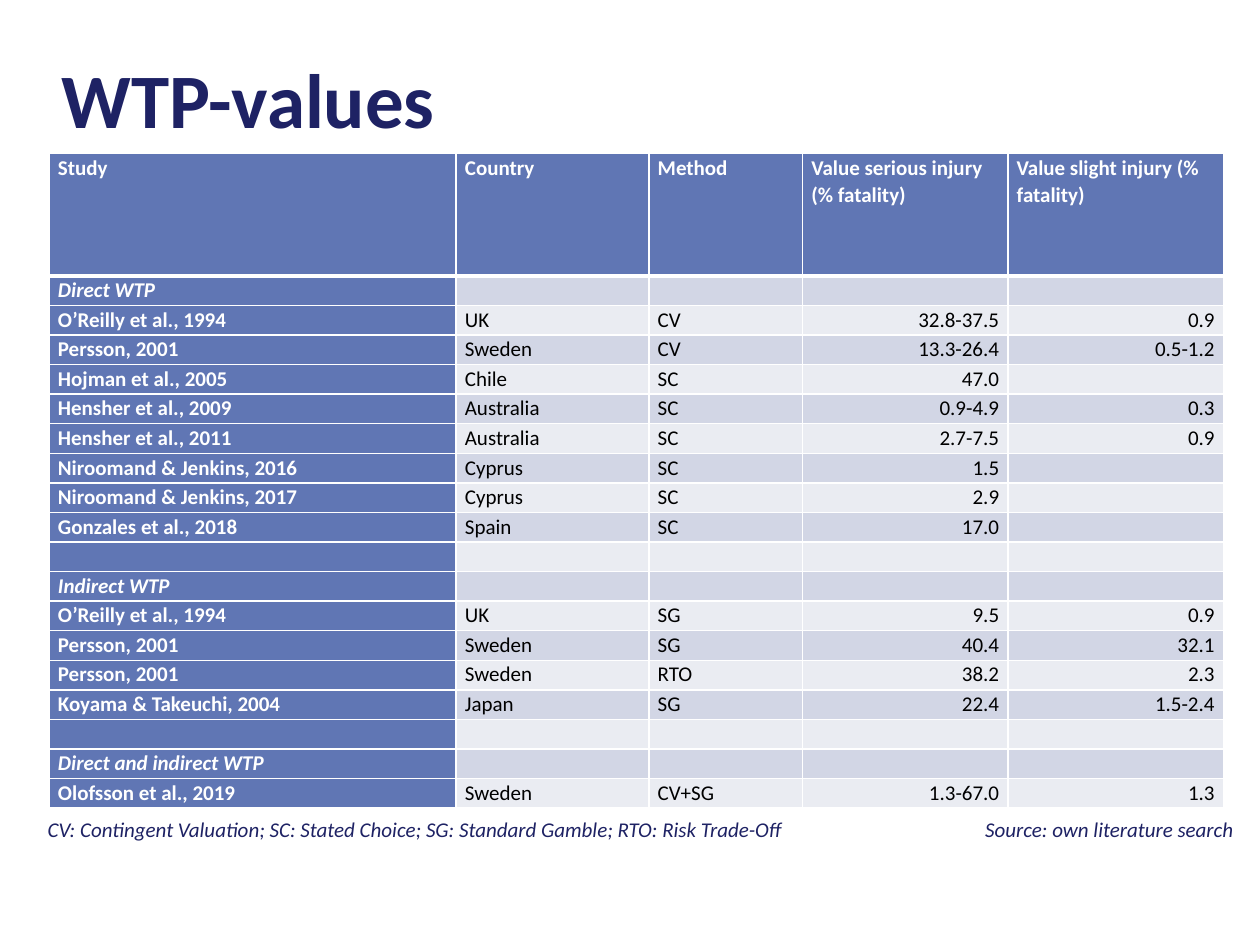
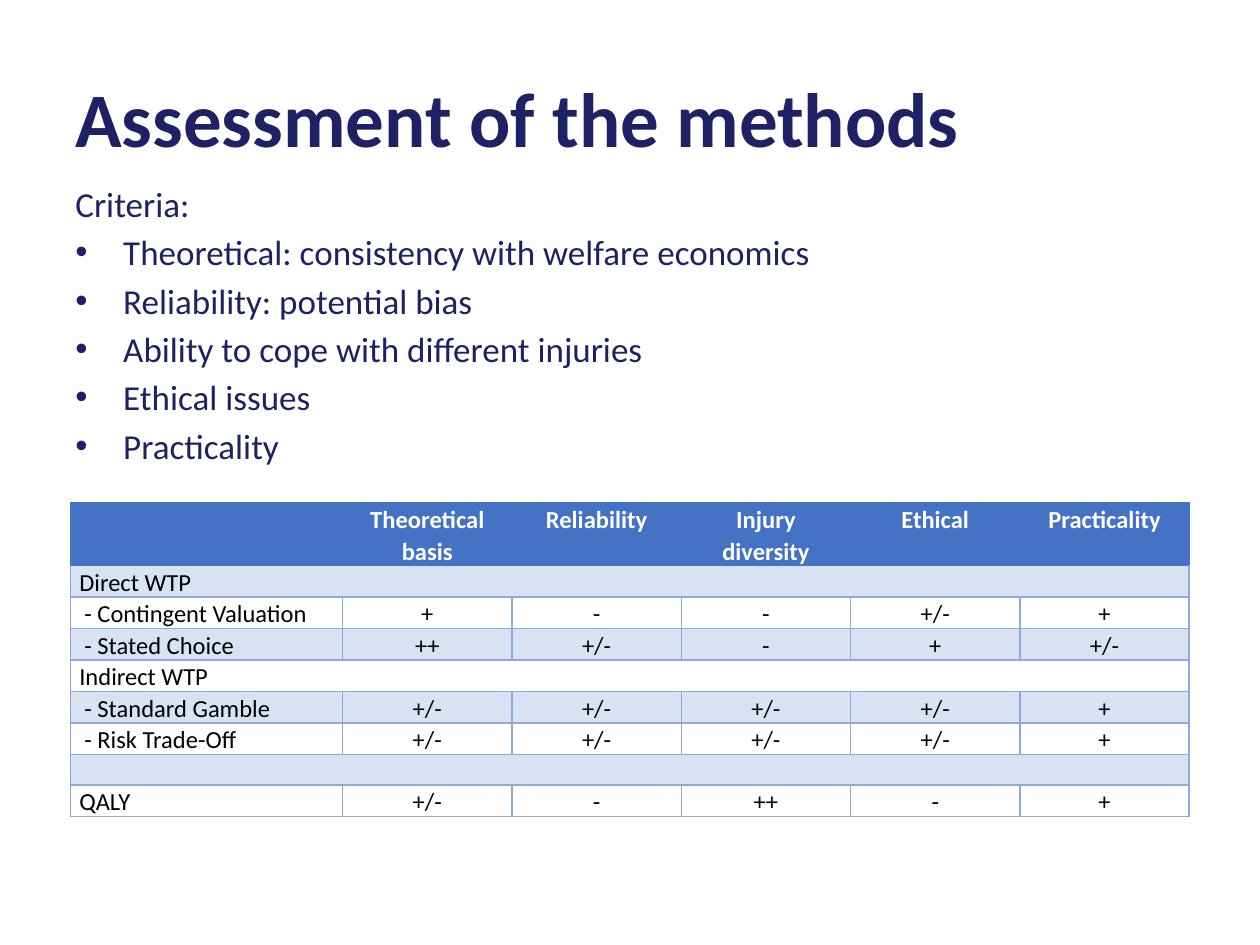
from dataclasses import dataclass

from lxml import etree
from pptx import Presentation
from pptx.dml.color import RGBColor
from pptx.enum.text import MSO_ANCHOR, PP_ALIGN
from pptx.oxml.ns import qn
from pptx.util import Inches, Length, Pt

LEFT, CENTER, RIGHT = PP_ALIGN.LEFT, PP_ALIGN.CENTER, PP_ALIGN.RIGHT
MIDDLE, TOP = MSO_ANCHOR.MIDDLE, MSO_ANCHOR.TOP

SLIDE_W, SLIDE_H = Inches(10), Inches(7.5)
GRID_COLS, GRID_ROWS = 100, 75


@dataclass(frozen=True)
class Theme:
    font: str = "Calibri"
    navy: str = "1E2264"
    white: str = "FFFFFF"
    black: str = "000000"
    slate: str = "6076B4"
    slate_mid: str = "D2D6E5"
    slate_pale: str = "EAECF2"
    blue: str = "4472C4"
    blue_pale: str = "D9E2F3"
    blue_line: str = "8EAADB"
    title: float = 44
    body: float = 20
    note: float = 12
    values: float = 12
    scores: float = 14


THEME = Theme()


@dataclass(frozen=True)
class Box:
    """Place and size in grid columns and rows."""
    col: float
    row: float
    cols: float
    rows: float

    def emu(self) -> tuple[Length, Length, Length, Length]:
        return across(self.col), down(self.row), across(self.cols), down(self.rows)


@dataclass(frozen=True)
class TextStyle:
    size: float
    color: str = THEME.navy
    bold: bool = False
    italic: bool = False


@dataclass(frozen=True)
class TableLook:
    size: float
    header_fill: str
    header_line: str
    header_rule: float
    line: str
    bands: tuple[str | None, str | None]
    aligns: tuple[PP_ALIGN, ...]
    header_align: PP_ALIGN
    label_fill: str | None = None
    merge_sections: bool = False


@dataclass(frozen=True)
class TableData:
    """A row with a single entry is a section row or a gap."""
    col: float
    row: float
    widths: tuple[float, ...]
    header_height: float
    row_height: float
    rows: tuple[tuple[str, ...], ...]


TITLE = TextStyle(THEME.title, bold=True)
BODY = TextStyle(THEME.body)
NOTE = TextStyle(THEME.note, italic=True)

VALUES_LOOK = TableLook(
    THEME.values, THEME.slate, THEME.white, 3, THEME.white,
    (THEME.slate_mid, THEME.slate_pale),
    (LEFT, LEFT, LEFT, RIGHT, RIGHT), LEFT, label_fill=THEME.slate)
SCORES_LOOK = TableLook(
    THEME.scores, THEME.blue, THEME.blue, 1, THEME.blue_line,
    (THEME.blue_pale, None),
    (LEFT,) + (CENTER,) * 5, CENTER, merge_sections=True)

WTP_VALUES = TableData(3.9, 12.2, (32.3, 15.3, 12.2, 16.3, 17.1), 9.7, 2.35, (
    ("Study", "Country", "Method", "Value serious injury (% fatality)",
     "Value slight injury (% fatality)"),
    ("Direct WTP",),
    ("O’Reilly et al., 1994", "UK", "CV", "32.8-37.5", "0.9"),
    ("Persson, 2001", "Sweden", "CV", "13.3-26.4", "0.5-1.2"),
    ("Hojman et al., 2005", "Chile", "SC", "47.0", ""),
    ("Hensher et al., 2009", "Australia", "SC", "0.9-4.9", "0.3"),
    ("Hensher et al., 2011", "Australia", "SC", "2.7-7.5", "0.9"),
    ("Niroomand & Jenkins, 2016", "Cyprus", "SC", "1.5", ""),
    ("Niroomand & Jenkins, 2017", "Cyprus", "SC", "2.9", ""),
    ("Gonzales et al., 2018", "Spain", "SC", "17.0", ""),
    ("",),
    ("Indirect WTP",),
    ("O’Reilly et al., 1994", "UK", "SG", "9.5", "0.9"),
    ("Persson, 2001", "Sweden", "SG", "40.4", "32.1"),
    ("Persson, 2001", "Sweden", "RTO", "38.2", "2.3"),
    ("Koyama & Takeuchi, 2004", "Japan", "SG", "22.4", "1.5-2.4"),
    ("",),
    ("Direct and indirect WTP",),
    ("Olofsson et al., 2019", "Sweden", "CV+SG", "1.3-67.0", "1.3"),
))
METHOD_SCORES = TableData(5.6, 39.9, (21.6,) + (13.44,) * 5, 4.8, 2.4, (
    ("", "Theoretical basis", "Reliability", "Injury diversity", "Ethical",
     "Practicality"),
    ("Direct WTP",),
    ("- Contingent Valuation", "+", "-", "-", "+/-", "+"),
    ("- Stated Choice", "++", "+/-", "-", "+", "+/-"),
    ("Indirect WTP",),
    ("- Standard Gamble", "+/-", "+/-", "+/-", "+/-", "+"),
    ("- Risk Trade-Off", "+/-", "+/-", "+/-", "+/-", "+"),
    ("",),
    ("QALY", "+/-", "-", "++", "-", "+"),
))
CRITERIA = (
    "Theoretical: consistency with welfare economics",
    "Reliability: potential bias",
    "Ability to cope with different injuries",
    "Ethical issues",
    "Practicality",
)


def across(cols: float) -> Length:
    return Length(round(SLIDE_W * cols / GRID_COLS))


def down(rows: float) -> Length:
    return Length(round(SLIDE_H * rows / GRID_ROWS))


def set_font(p, style: TextStyle) -> None:
    f = p.font
    f.name, f.size = THEME.font, Pt(style.size)
    f.bold, f.italic = style.bold, style.italic
    f.color.rgb = RGBColor.from_string(style.color)


def indent(p, left: Length, first: Length = Length(0)) -> None:
    pPr = p._p.get_or_add_pPr()
    pPr.set("marL", str(left))
    pPr.set("indent", str(first))


def add_bullet(p) -> None:
    indent(p, across(3.8), Length(-across(3.8)))
    etree.SubElement(p._p.get_or_add_pPr(), qn("a:buFont"), typeface="Arial")
    etree.SubElement(p._p.get_or_add_pPr(), qn("a:buChar"), char="•")


def add_text(s, box: Box, lines: tuple[str, ...], style: TextStyle,
             anchor: MSO_ANCHOR = TOP) -> None:
    """Draw the first line plain and any further lines as bullets."""
    tf = s.shapes.add_textbox(*box.emu()).text_frame
    tf.word_wrap, tf.vertical_anchor = True, anchor
    for i, line in enumerate(lines):
        p = tf.add_paragraph() if i else tf.paragraphs[0]
        p.text = line
        if i:
            p.space_before = Pt(3.6)
            add_bullet(p)
        set_font(p, style)


def set_borders(cell, color: str, top: tuple[str, float], bottom: float) -> None:
    tcPr = cell._tc.get_or_add_tcPr()
    sides = {"lnL": (color, 1), "lnR": (color, 1), "lnT": top, "lnB": (color, bottom)}
    for side, (rgb, width) in sides.items():
        ln = etree.SubElement(tcPr, qn(f"a:{side}"), w=str(Pt(width)))
        fill = etree.SubElement(ln, qn("a:solidFill"))
        etree.SubElement(fill, qn("a:srgbClr"), val=rgb)


def set_cell(cell, text: str, style: TextStyle, align: PP_ALIGN,
             fill: str | None) -> None:
    cell.margin_left = cell.margin_right = across(0.7)
    cell.margin_top = cell.margin_bottom = 0
    if fill:
        cell.fill.solid()
        cell.fill.fore_color.rgb = RGBColor.from_string(fill)
    else:
        cell.fill.background()
    p = cell.text_frame.paragraphs[0]
    p.text, p.alignment = text, align
    p.line_spacing, p.space_after = 1.07, Pt(8)
    if text.startswith("- "):
        indent(p, across(0.4))
    set_font(p, style)
    if not text:
        p._p.get_or_add_endParaRPr().set("sz", str(int(style.size * 100)))


def add_table(s, data: TableData, look: TableLook) -> None:
    n_rows, n_cols = len(data.rows), len(data.widths)
    heights = [data.header_height] + [data.row_height] * (n_rows - 1)
    box = Box(data.col, data.row, sum(data.widths), sum(heights))
    table = s.shapes.add_table(n_rows, n_cols, *box.emu()).table
    table.horz_banding = False
    for column, width in zip(table.columns, data.widths):
        column.width = across(width)

    for i, entries in enumerate(data.rows):
        table.rows[i].height = down(heights[i])
        is_header, is_section = i == 0, len(entries) == 1
        padded = entries + ("",) * (n_cols - len(entries))
        for j, text in enumerate(padded):
            cell = table.cell(i, j)
            is_label = j == 0 and look.label_fill is not None
            line = look.header_line if is_header else look.line
            top = (look.header_line, look.header_rule) if i == 1 else (line, 1)
            set_borders(cell, line, top, look.header_rule if is_header else 1)
            if is_header:
                fill, align = look.header_fill, look.header_align
            else:
                fill = look.label_fill if is_label else look.bands[(i - 1) % 2]
                align = look.aligns[j]
            strong = is_header or is_label
            style = TextStyle(look.size, THEME.white if strong else THEME.black,
                              bold=strong, italic=is_label and is_section)
            set_cell(cell, text, style, align, fill)
        if is_section and look.merge_sections:
            table.cell(i, 0).merge(table.cell(i, n_cols - 1))


def add_slide(prs, title: str, col: float, row: float):
    s = prs.slides.add_slide(prs.slide_layouts[6])
    add_text(s, Box(col, row, 90, 12.5), (title,), TITLE, MIDDLE)
    return s


def main() -> None:
    prs = Presentation()
    prs.slide_width, prs.slide_height = SLIDE_W, SLIDE_H

    s = add_slide(prs, "WTP-values", 3.9, 1.5)
    add_table(s, WTP_VALUES, VALUES_LOOK)
    add_text(s, Box(2.8, 64.3, 60.6, 3),
             ("CV: Contingent Valuation; SC: Stated Choice; SG: Standard Gamble; "
              "RTO: Risk Trade-Off",), NOTE)
    add_text(s, Box(77.2, 64.3, 22.8, 3), ("Source: own literature search",), NOTE)

    s = add_slide(prs, "Assessment of the methods", 5, 3)
    add_text(s, Box(5, 14, 90, 25), ("Criteria:",) + CRITERIA, BODY)
    add_table(s, METHOD_SCORES, SCORES_LOOK)

    prs.save("out.pptx")


if __name__ == "__main__":
    main()
